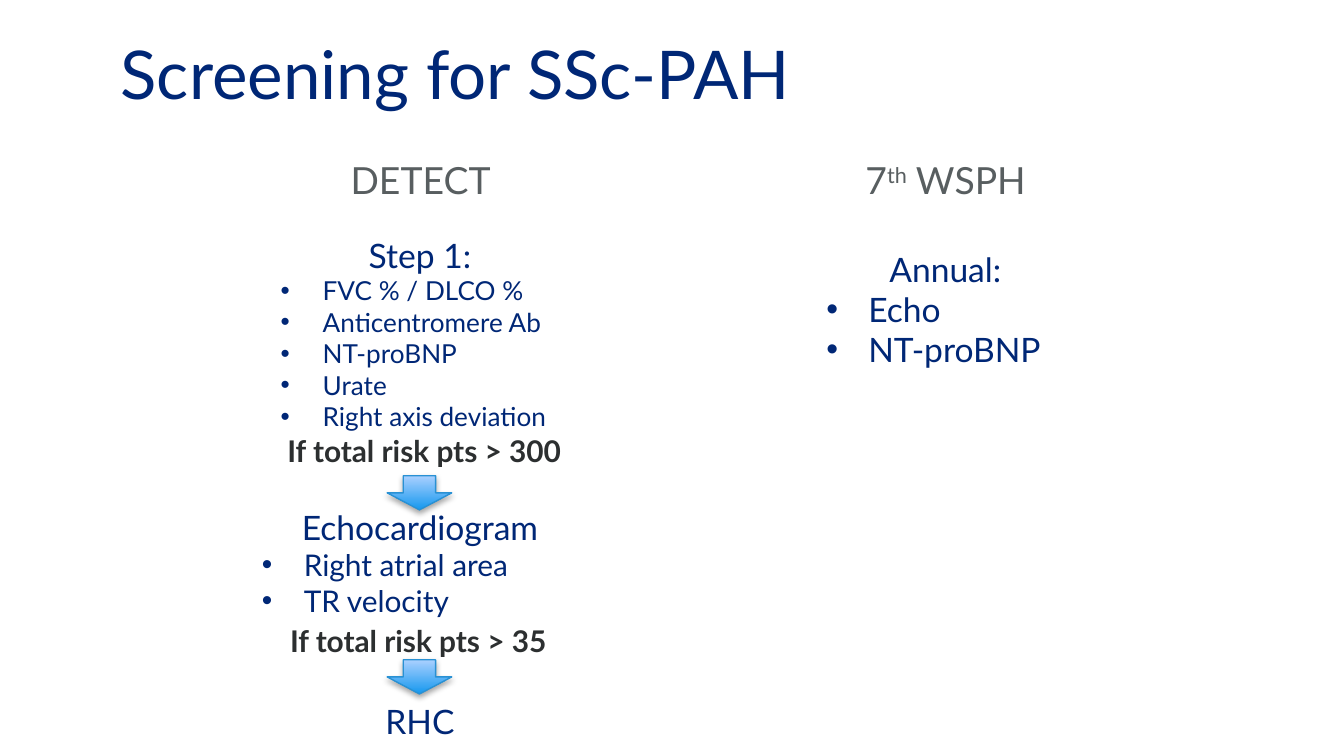
"""Build the slide comparing two screening pathways for SSc-PAH."""
from dataclasses import dataclass

from lxml import etree
from pptx import Presentation
from pptx import util as u
from pptx.dml.color import RGBColor
from pptx.enum import shapes, text
from pptx.oxml import parse_xml
from pptx.oxml.ns import nsdecls, qn
from pptx.slide import Slide

FONT = "Lato"
INDENT = 22.5
COLOURS = {
    "navy": "002776",
    "grey": "585E60",
    "dark": "2C2F30",
    "arrow_low": "1598EE",
    "arrow_high": "AAD0FF",
    "arrow_line": "2991D4",
    "shadow": "000000",
}


@dataclass(frozen=True)
class Line:
    """One paragraph, whose odd-numbered spans are superscript."""

    spans: tuple[str, ...]
    size: float
    colour: str = "navy"
    bold: bool = False
    align: text.PP_ALIGN = text.PP_ALIGN.CENTER
    bullet: bool = False


@dataclass(frozen=True)
class Block:
    """A text box with its place in points."""

    left: float
    top: float
    width: float
    height: float
    lines: tuple[Line, ...]
    wrap: bool = True
    grow: bool = True


def colour(name: str) -> RGBColor:
    """Return a named colour."""
    return RGBColor.from_string(COLOURS[name])


def heading(*spans: str) -> Line:
    """Return a grey column heading."""
    return Line(spans, 20, "grey")


def step(words: str) -> Line:
    """Return a centred step name."""
    return Line((words,), 18)


def bullets(size: float, *items: str) -> tuple[Line, ...]:
    """Return bulleted lines of one size."""
    return tuple(Line((item,), size, align=text.PP_ALIGN.LEFT, bullet=True) for item in items)


def threshold(left: float, top: float, width: float, points: int) -> Block:
    """Return a bold risk threshold on one line."""
    line = Line((f"If total risk pts > {points}",), 16, "dark", True, text.PP_ALIGN.LEFT)
    return Block(left, top, width, 26.6, (line,), wrap=False)


def draw_block(page: Slide, block: Block) -> None:
    """Draw a text box and its paragraphs."""
    box = page.shapes.add_textbox(
        u.Pt(block.left), u.Pt(block.top), u.Pt(block.width), u.Pt(block.height)
    )
    frame = box.text_frame
    frame.word_wrap = block.wrap
    if block.grow:
        frame.auto_size = text.MSO_AUTO_SIZE.SHAPE_TO_FIT_TEXT
    else:
        frame.vertical_anchor = text.MSO_ANCHOR.MIDDLE
    for index, line in enumerate(block.lines):
        para = frame.add_paragraph() if index else frame.paragraphs[0]
        para.alignment = line.align
        if line.bullet:
            properties = para._p.get_or_add_pPr()
            properties.set("marL", str(u.Pt(INDENT)))
            properties.set("indent", str(-u.Pt(INDENT)))
            etree.SubElement(properties, qn("a:buFont"), typeface="Arial")
            etree.SubElement(properties, qn("a:buChar"), char="•")
        para.font.name = FONT
        para.font.size = u.Pt(line.size)
        para.font.bold = line.bold
        para.font.color.rgb = colour(line.colour)
        for position, words in enumerate(line.spans):
            span = para.add_run()
            span.text = words
            if position % 2:
                span._r.get_or_add_rPr().set("baseline", "30000")


def draw_arrow(page: Slide, top: float) -> None:
    """Draw a shaded down arrow in the left column."""
    arrow = page.shapes.add_shape(
        shapes.MSO_SHAPE.DOWN_ARROW, u.Pt(207.4), u.Pt(top), u.Pt(34.6), u.Pt(18.3)
    )
    arrow.fill.gradient()
    arrow.fill.gradient_angle = 90
    for stop, name in zip(arrow.fill.gradient_stops, ("arrow_low", "arrow_high")):
        stop.color.rgb = colour(name)
    arrow.line.color.rgb = colour("arrow_line")
    arrow.line.width = u.Pt(0.75)
    arrow.shadow.inherit = False
    arrow._element.spPr.find(qn("a:effectLst")).append(parse_xml(
        f'<a:outerShdw {nsdecls("a")} blurRad="{u.Pt(3.1)}" dist="{u.Pt(1.8)}" '
        f'dir="5400000" rotWithShape="0"><a:srgbClr val="{COLOURS["shadow"]}">'
        '<a:alpha val="35000"/></a:srgbClr></a:outerShdw>'
    ))


TITLE = Line(("Screening for SSc-PAH",), 36, align=text.PP_ALIGN.LEFT)
BLOCKS = (
    Block(57.6, 14.4, 599, 49, (TITLE,), grow=False),
    Block(178.6, 80.6, 93.6, 31.7, (heading("DETECT"),)),
    Block(445, 80.6, 123.1, 31.7, (heading("7", "th", " WSPH"),)),
    Block(435.6, 129.6, 141.8, 72.7, (step("Annual:"), *bullets(18, "Echo", "NT-proBNP"))),
    Block(143.3, 122.1, 163.4, 113.8, (
        step("Step 1:"),
        *bullets(14, "FVC % / DLCO %", "Anticentromere Ab", "NT-proBNP", "Urate",
                 "Right axis deviation"),
    )),
    threshold(146.9, 228.2, 162.7, 300),
    Block(133.2, 267.8, 183.6, 67.7, (
        step("Echocardiogram"), *bullets(16, "Right atrial area", "TR velocity"),
    )),
    threshold(148.3, 329.8, 154.8, 35),
    Block(133.2, 372.2, 183.6, 28.8, (step("RHC"),)),
)
ARROW_TOPS = (254.9, 353.5)


def main() -> None:
    """Build and save the deck."""
    deck = Presentation()
    deck.slide_width, deck.slide_height = u.Pt(720), u.Pt(405)
    page = deck.slides.add_slide(deck.slide_layouts[6])
    for top in ARROW_TOPS:
        draw_arrow(page, top)
    for block in BLOCKS:
        draw_block(page, block)
    deck.save("out.pptx")


if __name__ == "__main__":
    main()
